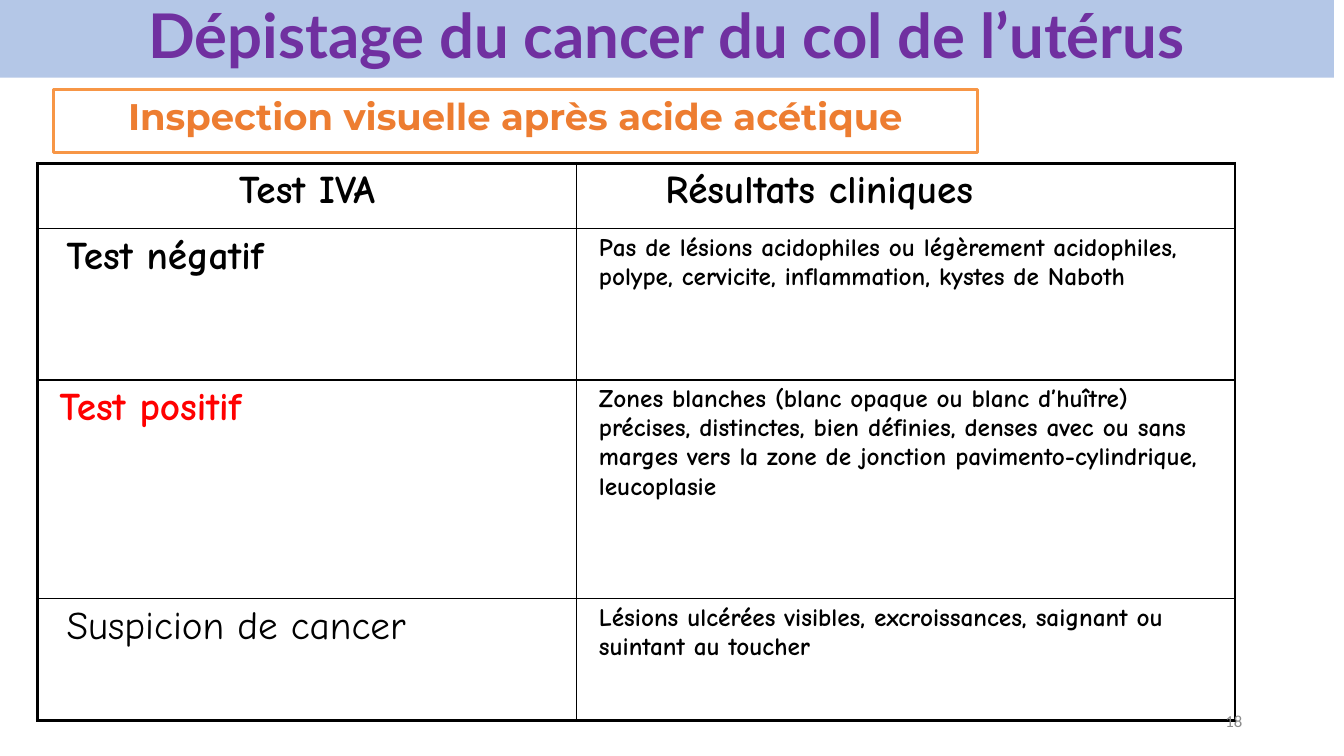
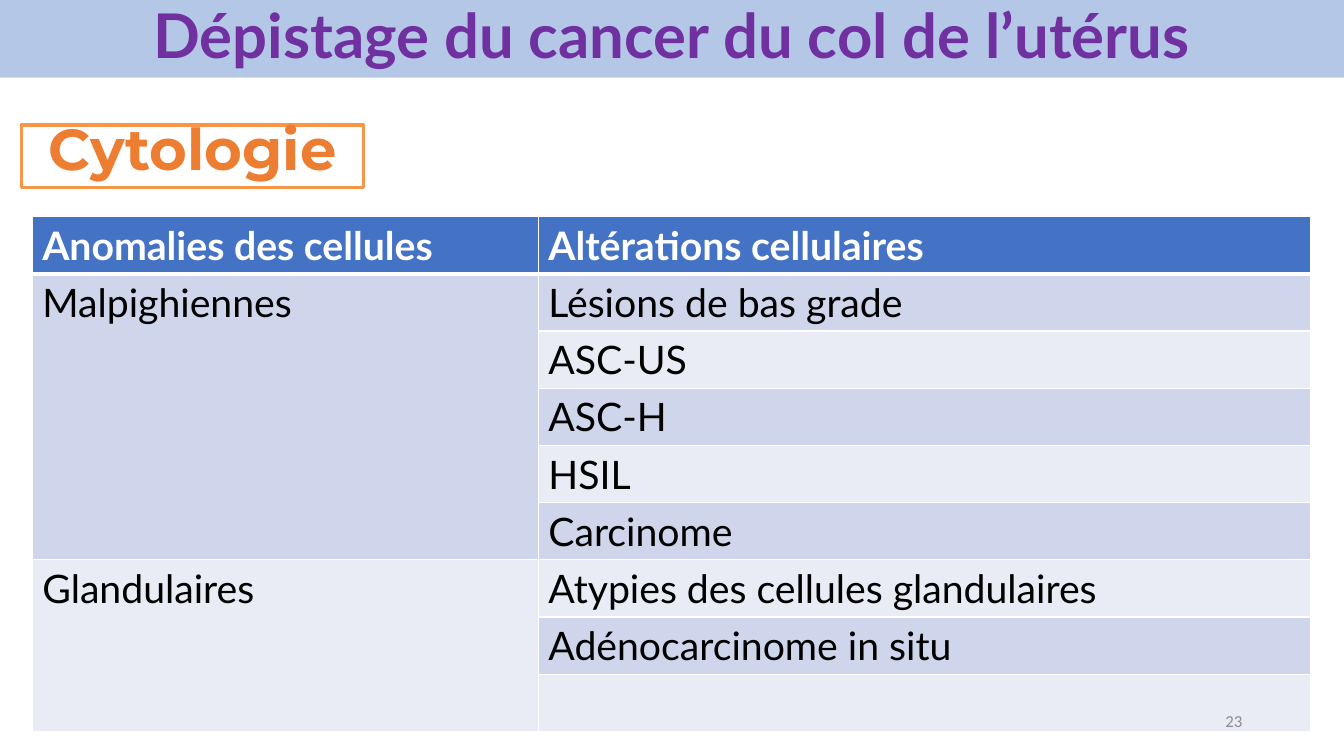
from lxml import etree
from pptx import Presentation
from pptx.dml.color import RGBColor
from pptx.enum import shapes, text
from pptx.oxml import ns
from pptx.util import Inches, Pt

BLACK = RGBColor(0x00, 0x00, 0x00)
WHITE = RGBColor(0xFF, 0xFF, 0xFF)
RED = RGBColor(0xFF, 0x00, 0x00)
GREY = RGBColor(0x8C, 0x8C, 0x8C)
PURPLE = RGBColor(0x70, 0x30, 0xA0)
ORANGE = RGBColor(0xED, 0x7D, 0x31)
FRAME = RGBColor(0xF7, 0x96, 0x46)
BAND = RGBColor(0xB4, 0xC7, 0xE7)
HEADER = RGBColor(0x44, 0x72, 0xC4)
STRIPES = RGBColor(0xCF, 0xD5, 0xEA), RGBColor(0xE9, 0xEB, 0xF5)

TITLE = "Dépistage du cancer du col de l’utérus"
CENTER, RIGHT = text.PP_ALIGN.CENTER, text.PP_ALIGN.RIGHT


class Deck:
    """Holds the shared style and the slide being built."""

    def __init__(self):
        self.deck = Presentation()
        self.deck.slide_width = Inches(13.33)
        self.deck.slide_height = Inches(7.5)
        self.page = None

    def add_page(self, band_width):
        self.page = self.deck.slides.add_slide(self.deck.slide_layouts[5])
        title = self.page.shapes.title
        title.left, title.top = Inches(0), Inches(0)
        title.width, title.height = Inches(band_width), Inches(0.77)
        title.fill.solid()
        title.fill.fore_color.rgb = BAND
        title.text_frame.auto_size = text.MSO_AUTO_SIZE.NONE
        self.set_text(title.text_frame, TITLE, 44, PURPLE, "Lato", True, CENTER, 0.9)

    def set_text(self, frame, words, size, color, font, bold=False, align=None, spacing=None):
        frame.word_wrap = True
        frame.vertical_anchor = text.MSO_ANCHOR.MIDDLE
        frame.text = words
        self.style(frame.paragraphs[0], size, color, font, bold, align, spacing)

    def style(self, para, size, color, font, bold=False, align=None, spacing=None):
        para.alignment = align
        para.line_spacing = spacing
        for span in para.runs:
            span.font.size = Pt(size)
            span.font.color.rgb = color
            span.font.name = font
            span.font.bold = bold

    def subtitle(self, words, left, top, width, size):
        box = self.page.shapes.add_shape(
            shapes.MSO_SHAPE.RECTANGLE, Inches(left), Inches(top), Inches(width), Inches(0.62))
        box.shadow.inherit = False
        box.fill.background()
        box.line.color.rgb = FRAME
        box.line.width = Pt(2.25)
        self.set_text(box.text_frame, words, size, ORANGE, "Montserrat", True, CENTER, 0.7)

    def page_number(self, number):
        box = self.page.shapes.add_textbox(Inches(9.42), Inches(6.95), Inches(3), Inches(0.4))
        self.set_text(box.text_frame, number, 12, GREY, "Calibri", align=RIGHT)

    def table(self, left, top, widths, heights):
        frame = self.page.shapes.add_table(
            len(heights), len(widths), Inches(left), Inches(top),
            Inches(sum(widths)), Inches(sum(heights)))
        grid = frame.table
        grid.first_row = grid.horz_banding = False
        for column, width in zip(grid.columns, widths):
            column.width = Inches(width)
        for row, height in zip(grid.rows, heights):
            row.height = Inches(height)
        return grid

    def fill(self, cell, color=None):
        if color is None:
            cell.fill.background()
        else:
            cell.fill.solid()
            cell.fill.fore_color.rgb = color

    def borders(self, cell, color, left=1, right=1, top=1, bottom=1):
        props = cell._tc.get_or_add_tcPr()
        for place, (side, width) in enumerate(zip("LRTB", (left, right, top, bottom))):
            line = etree.Element(ns.qn(f"a:ln{side}"), w=str(Pt(width)))
            solid = etree.SubElement(line, ns.qn("a:solidFill"))
            etree.SubElement(solid, ns.qn("a:srgbClr"), val=str(color))
            props.insert(place, line)

    def cell_text(self, cell, words, size, color, font, bold=False, align=None, indent=0):
        cell.text = words
        para = cell.text_frame.paragraphs[0]
        para._p.get_or_add_pPr().set("marL", str(Inches(indent)))
        self.style(para, size, color, font, bold, align)


def build_inspection(deck):
    rows = [
        (("Test IVA", 28, BLACK, True, CENTER, 0),
         ("Résultats cliniques", 28, BLACK, True, None, 0.78)),
        (("Test négatif", 28, BLACK, True, None, 0.19),
         "Pas de lésions acidophiles ou légèrement acidophiles, polype, cervicite, "
         "inflammation, kystes de Naboth"),
        (("Test positif", 28, RED, True, None, 0.12),
         "Zones blanches (blanc opaque ou blanc d’huître) précises, distinctes, bien "
         "définies, denses avec ou sans marges vers la zone de jonction "
         "pavimento-cylindrique, leucoplasie"),
        (("Suspicion de cancer", 28, BLACK, False, None, 0.19),
         "Lésions ulcérées visibles, excroissances, saignant ou suintant au toucher"),
    ]
    deck.add_page(13.23)
    grid = deck.table(0.37, 1.62, [5.35, 6.53], [0.65, 1.5, 2.17, 1.21])
    last = len(rows) - 1
    for r, row in enumerate(rows):
        for c, entry in enumerate(row):
            if isinstance(entry, str):
                entry = (entry, 18, BLACK, True, None, 0.12)
            words, size, color, bold, align, indent = entry
            cell = grid.cell(r, c)
            deck.cell_text(cell, words, size, color, "Comic Neue", bold, align, indent)
            deck.fill(cell)
            deck.borders(cell, BLACK,
                         left=2.25 if c == 0 else 1, right=2.25 if c == 1 else 1,
                         top=2.25 if r == 0 else 1, bottom=2.25 if r == last else 1)
    deck.subtitle("Inspection visuelle après acide acétique", 0.53, 0.89, 9.17, 26.4)
    deck.page_number("18")


def build_cytology(deck):
    rows = [
        ("Anomalies des cellules", "Altérations cellulaires"),
        ("Malpighiennes", "Lésions de bas grade"),
        ("", "ASC-US"),
        ("", "ASC-H"),
        ("", "HSIL"),
        ("", "Carcinome"),
        ("Glandulaires", "Atypies des cellules glandulaires"),
        ("", "Adénocarcinome in situ"),
        ("", ""),
    ]
    deck.add_page(13.33)
    grid = deck.table(0.32, 2.15, [5.02, 7.66], [5.1 / len(rows)] * len(rows))
    for r, row in enumerate(rows):
        head = r == 0
        for c, words in enumerate(row):
            cell = grid.cell(r, c)
            deck.cell_text(cell, words, 28, WHITE if head else BLACK, "Lato", head)
            deck.fill(cell, HEADER if head else STRIPES[(r - 1) % 2])
            deck.borders(cell, WHITE, top=3 if r == 1 else 1, bottom=3 if head else 1)
    for first, final in ((1, 5), (6, 8)):
        grid.cell(first, 0).merge(grid.cell(final, 0))
    deck.subtitle("Cytologie", 0.21, 1.24, 3.4, 41.2)
    deck.page_number("23")


def main():
    deck = Deck()
    build_inspection(deck)
    build_cytology(deck)
    deck.deck.save("out.pptx")


if __name__ == "__main__":
    main()
